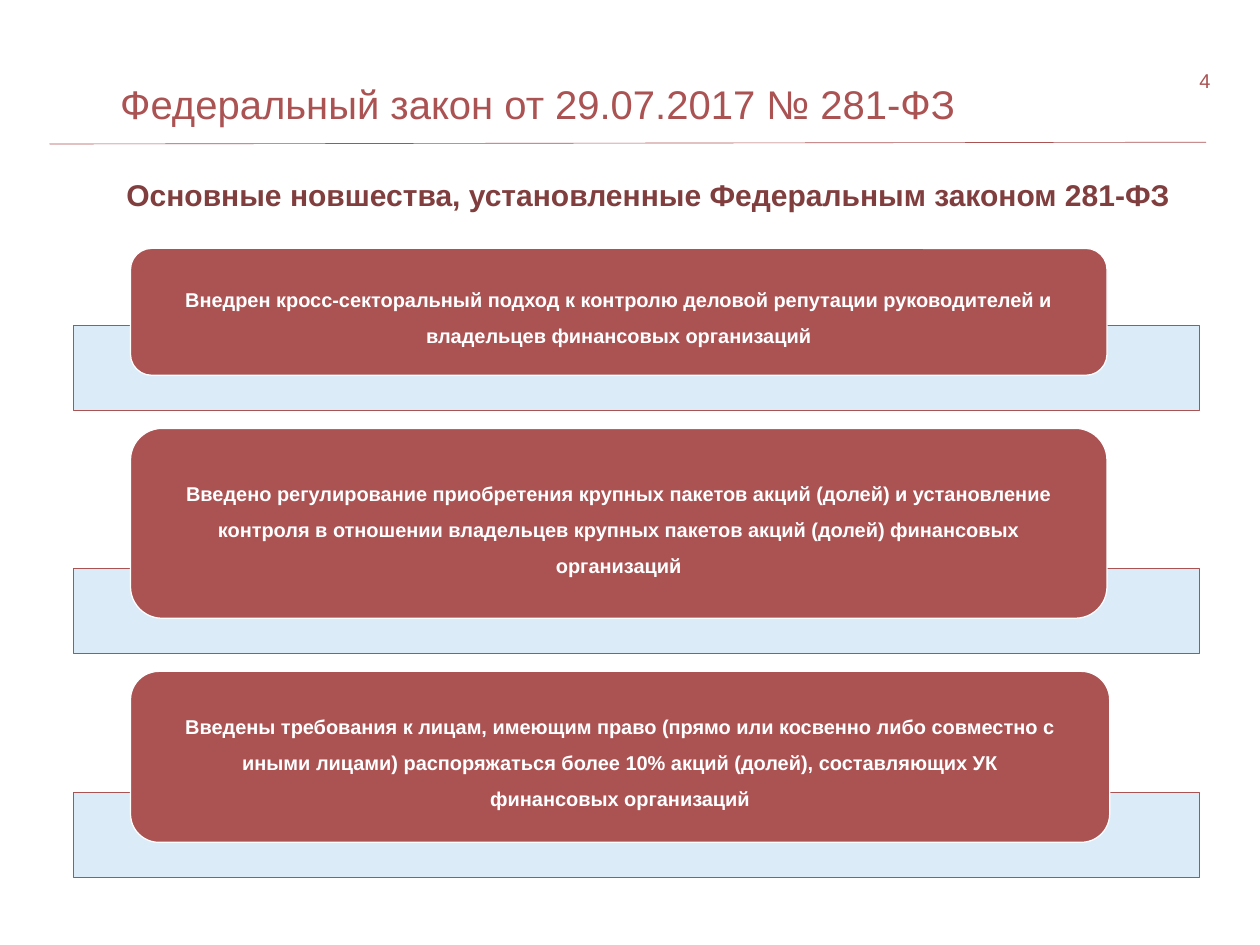
from lxml import etree
from pptx import Presentation
from pptx.dml.color import RGBColor
from pptx.enum.shapes import MSO_CONNECTOR, MSO_SHAPE
from pptx.enum.text import MSO_ANCHOR, MSO_AUTO_SIZE, PP_ALIGN
from pptx.oxml.ns import qn
from pptx.util import Inches, Pt

RED = RGBColor(0xAB, 0x52, 0x53)
DARK_RED = RGBColor(0x80, 0x3E, 0x3E)
PALE_BLUE = RGBColor(0xD8, 0xEA, 0xF8)
WHITE = RGBColor(0xFF, 0xFF, 0xFF)

RECTANGLE = MSO_SHAPE.RECTANGLE
ROUNDED_RECTANGLE = MSO_SHAPE.ROUNDED_RECTANGLE
STRAIGHT = MSO_CONNECTOR.STRAIGHT
CENTER, RIGHT = PP_ALIGN.CENTER, PP_ALIGN.RIGHT
TOP, MIDDLE = MSO_ANCHOR.TOP, MSO_ANCHOR.MIDDLE
NO_AUTO_SIZE = MSO_AUTO_SIZE.NONE

FONT = "Arial"
BAND_LEFT, BAND_WIDTH, BAND_HEIGHT = 0.82, 12.51, 0.94
CARD_LEFT = 1.45
BAND_OVERHANG = 0.39  # how far a band reaches below its card

# Card top, width, height and text
INNOVATIONS = [
    (2.76, 10.85, 1.41,
     "Внедрен кросс-секторальный подход к контролю деловой репутации "
     "руководителей и владельцев финансовых организаций"),
    (4.76, 10.85, 2.11,
     "Введено регулирование приобретения крупных пакетов акций (долей) и "
     "установление контроля в отношении владельцев крупных пакетов акций "
     "(долей) финансовых организаций"),
    (7.46, 10.88, 1.9,
     "Введены требования к лицам, имеющим право (прямо или косвенно либо "
     "совместно с иными лицами) распоряжаться более 10% акций (долей), "
     "составляющих УК финансовых организаций"),
]


def place(shape, left, top, width, height):
    shape.left, shape.top = Inches(left), Inches(top)
    shape.width, shape.height = Inches(width), Inches(height)


def write_text(shape, text, *, size, color, bold=False, align=CENTER,
               anchor=TOP, inset=(0, 0), line_spacing=1.0):
    """Fill a shape with one paragraph; inset is (horizontal, vertical)."""
    frame = shape.text_frame
    frame.word_wrap = True
    frame.auto_size = NO_AUTO_SIZE
    frame.vertical_anchor = anchor
    frame.margin_left = frame.margin_right = Inches(inset[0])
    frame.margin_top = frame.margin_bottom = Inches(inset[1])
    paragraph = frame.paragraphs[0]
    paragraph.alignment = align
    paragraph.line_spacing = line_spacing
    paragraph.space_before = Pt(0)
    run = paragraph.add_run()
    run.text = text
    run.font.name = FONT
    run.font.size = Pt(size)
    run.font.bold = bold
    run.font.color.rgb = color


def remove_bullet(paragraph):
    properties = paragraph._p.get_or_add_pPr()
    properties.set("marL", "0")
    properties.set("indent", "0")
    etree.SubElement(properties, qn("a:buNone"))


def set_opacity(shape, percent):
    color = shape.fill._xPr.find(qn("a:solidFill"))[0]
    etree.SubElement(color, qn("a:alpha"), val=str(percent * 1000))


def add_box(slide, kind, left, top, width, height, fill, line):
    shape = slide.shapes.add_shape(kind, 0, 0, 0, 0)
    place(shape, left, top, width, height)
    shape.shadow.inherit = False
    shape.fill.solid()
    shape.fill.fore_color.rgb = fill
    shape.line.color.rgb = line
    shape.line.width = Pt(1)
    return shape


def add_rule(slide, start, end):
    rule = slide.shapes.add_connector(STRAIGHT, *map(Inches, start + end))
    rule.line.color.rgb = RED
    rule.line.width = Pt(0.5)
    etree.SubElement(rule._element.spPr, qn("a:effectLst"))


def add_innovation(slide, top, width, height, text):
    """Add a pale band with a rounded card over it."""
    band_top = top + height + BAND_OVERHANG - BAND_HEIGHT
    band = add_box(slide, RECTANGLE, BAND_LEFT, band_top, BAND_WIDTH,
                   BAND_HEIGHT, PALE_BLUE, RED)
    set_opacity(band, 90)
    card = add_box(slide, ROUNDED_RECTANGLE, CARD_LEFT, top, width, height,
                   RED, WHITE)
    write_text(card, text, size=16, color=WHITE, bold=True, anchor=MIDDLE,
               inset=(0.41, 0), line_spacing=1.5)


def main():
    presentation = Presentation()
    presentation.slide_width = Inches(14)
    presentation.slide_height = Inches(10.5)
    slide = presentation.slides.add_slide(presentation.slide_layouts[1])

    title = slide.shapes.title
    place(title, 0.94, 0.81, 10.08, 0.69)
    write_text(title, "Федеральный закон от 29.07.2017 № 281-ФЗ",
               size=32, color=RED, inset=(0.15, 0.07))

    body = slide.placeholders[1]
    place(body, 0.96, 2.01, 12.48, 7.87)
    write_text(body,
               "Основные новшества, установленные Федеральным законом 281-ФЗ",
               size=24, color=DARK_RED, bold=True, line_spacing=0.9)
    remove_bullet(body.text_frame.paragraphs[0])

    page_number = slide.shapes.add_textbox(0, 0, 0, 0)
    place(page_number, 12.9, 0.53, 0.55, 0.72)
    write_text(page_number, "4", size=16, color=RED, align=RIGHT,
               anchor=MIDDLE)

    add_rule(slide, (0.55, 1.6), (13.4, 1.58))
    for innovation in INNOVATIONS:
        add_innovation(slide, *innovation)

    presentation.save("out.pptx")


if __name__ == "__main__":
    main()
